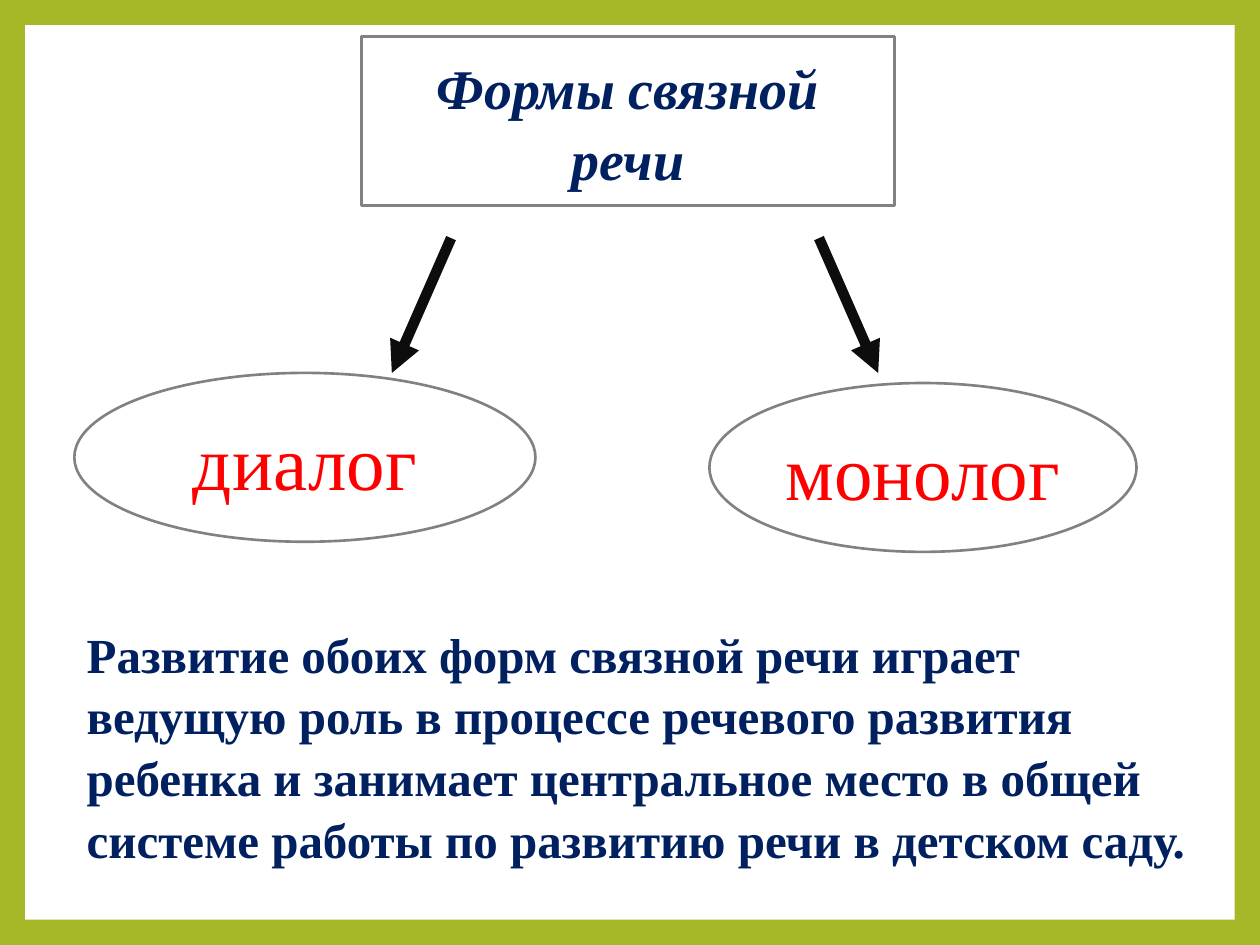
from lxml import etree
from pptx import Presentation
from pptx.dml.color import RGBColor
from pptx.enum.shapes import MSO_CONNECTOR, MSO_SHAPE
from pptx.enum.text import MSO_ANCHOR, MSO_AUTO_SIZE, PP_ALIGN
from pptx.oxml.ns import qn
from pptx.util import Inches, Pt

RECT, OVAL = MSO_SHAPE.RECTANGLE, MSO_SHAPE.OVAL
LINE = MSO_CONNECTOR.STRAIGHT
MIDDLE, TOP = MSO_ANCHOR.MIDDLE, MSO_ANCHOR.TOP
CENTER, LEFT = PP_ALIGN.CENTER, PP_ALIGN.LEFT
FIXED = MSO_AUTO_SIZE.NONE

GREEN = RGBColor(0xA6, 0xB7, 0x27)
WHITE = RGBColor(0xFF, 0xFF, 0xFF)
GRAY = RGBColor(0x81, 0x81, 0x83)
NAVY = RGBColor(0x00, 0x20, 0x60)
RED = RGBColor(0xFF, 0x00, 0x00)
BLACK = RGBColor(0x0D, 0x0D, 0x0D)

WIDE, HIGH, EDGE = 10, 7.5, 0.2
NODE = 1.34
FONT = "Times New Roman"

TITLE = "Формы связной речи"
FORMS = [
    ("диалог", 0.59, 2.96, 3.66),
    ("монолог", 5.63, 3.04, 3.39),
]
ARROWS = [(3.58, 3.11), (6.5, 6.97)]
NOTE = (
    "Развитие обоих форм связной речи играет ведущую роль в процессе "
    "речевого развития ребенка и занимает центральное место в общей "
    "системе работы по развитию речи в детском саду."
)


def place(shape, *box):
    shape.left, shape.top, shape.width, shape.height = map(Inches, box)


def paint(shape):
    shape.fill.solid()
    shape.fill.fore_color.rgb = WHITE
    shape.line.color.rgb = GRAY
    shape.line.width = Pt(1.5)


def write(shape, text, size, color, align=CENTER, anchor=MIDDLE,
          bold=False, italic=False):
    frame = shape.text_frame
    frame.text = text
    frame.word_wrap = True
    frame.auto_size = FIXED
    frame.vertical_anchor = anchor
    para = frame.paragraphs[0]
    para.alignment = align
    para.line_spacing = 1.05
    font = para.runs[0].font
    font.name, font.size = FONT, Pt(size)
    font.bold, font.italic = bold, italic
    font.color.rgb = color


def add_arrow(shapes, start, end, top, base):
    arrow = shapes.add_connector(LINE, *map(Inches, (start, top, end, base)))
    arrow.line.color.rgb = BLACK
    arrow.line.width = Pt(6)
    head = etree.SubElement(arrow.line._get_or_add_ln(), qn("a:tailEnd"))
    head.set("type", "triangle")
    etree.SubElement(arrow._element.spPr, qn("a:effectLst"))


def main():
    deck = Presentation()
    deck.slide_width, deck.slide_height = Inches(WIDE), Inches(HIGH)
    slide = deck.slides.add_slide(deck.slide_layouts[5])
    shapes = slide.shapes
    slide.background.fill.solid()
    slide.background.fill.fore_color.rgb = GREEN

    panel = shapes.add_shape(RECT, 0, 0, 0, 0)
    place(panel, EDGE, EDGE, WIDE - 2 * EDGE, HIGH - 2 * EDGE)
    panel.shadow.inherit = False
    panel.fill.solid()
    panel.fill.fore_color.rgb = WHITE
    panel.line.fill.background()

    title = shapes.title
    panel._element.addnext(title._element)
    place(title, 2.87, 0.29, 4.23, NODE)
    round_box = etree.SubElement(title._element.spPr, qn("a:prstGeom"))
    round_box.set("prst", "roundRect")
    etree.SubElement(round_box, qn("a:avLst"))
    paint(title)
    write(title, TITLE, 32, NAVY, bold=True, italic=True)

    for text, left, top, width in FORMS:
        oval = shapes.add_shape(OVAL, 0, 0, 0, 0)
        place(oval, left, top, width, NODE)
        oval.shadow.inherit = False
        paint(oval)
        write(oval, text, 44, RED)

    for start, end in ARROWS:
        add_arrow(shapes, start, end, 1.89, 2.96)

    note = shapes.add_textbox(0, 0, 0, 0)
    place(note, 0.59, 4.88, 9.06, 1.99)
    write(note, NOTE, 28, NAVY, LEFT, TOP, bold=True)

    deck.save("out.pptx")


if __name__ == "__main__":
    main()
